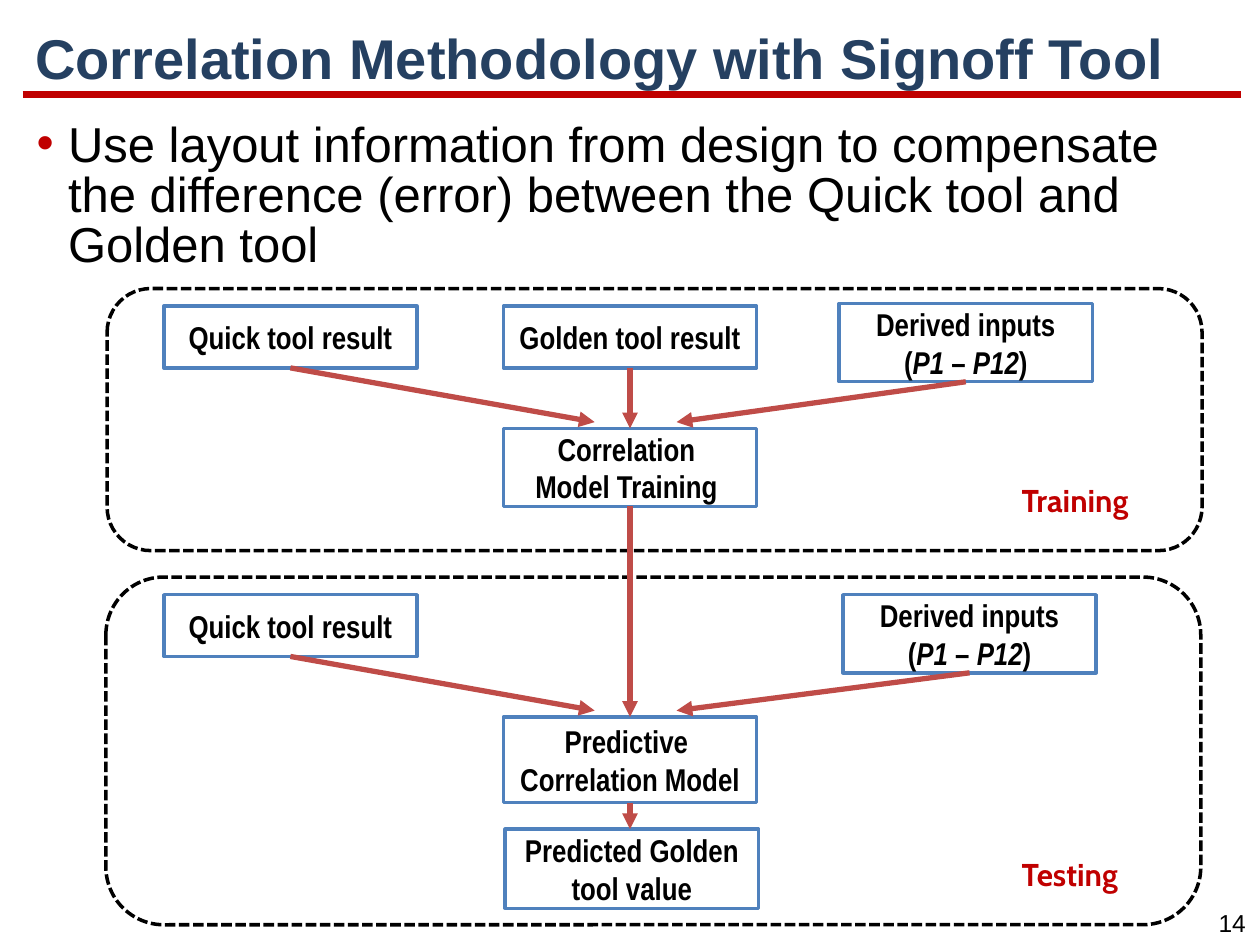
from lxml.etree import SubElement
from pptx import Presentation
from pptx.dml.color import RGBColor
from pptx.enum.dml import MSO_LINE
from pptx.enum.shapes import MSO_CONNECTOR, MSO_SHAPE
from pptx.enum.text import MSO_ANCHOR, MSO_AUTO_SIZE, PP_ALIGN
from pptx.oxml.ns import qn
from pptx.util import Inches, Pt

COLORS = {"navy": "254061", "red": "C00000", "black": "000000",
          "box": "4F81BD", "arrow": "BF4C48"}
FONTS = {
    "title": {"name": "Arial", "size": Pt(32), "bold": True, "color": "navy"},
    "body": {"name": "Arial", "size": Pt(28), "color": "black"},
    "page": {"name": "Arial", "size": Pt(14), "color": "black"},
    "box": {"name": "Arial Narrow", "size": Pt(18), "bold": True, "color": "black"},
    "label": {"name": "Cabin", "size": Pt(18), "bold": True, "color": "red"},
}
BOX_WIDTH = 2.01
CENTER = 5
DERIVED = "Derived inputs\n(*P1* – *P12*)"


def color(name):
    return RGBColor.from_string(COLORS[name])


def set_all(target, values):
    for name, value in values.items():
        setattr(target, name, value)


class FlowSlide:
    def __init__(self, deck):
        self.page = deck.slides.add_slide(deck.slide_layouts[1])
        self.shapes = self.page.shapes

    def fill_text(self, shape, text, style, frame_format, para_format):
        """Fill a shape with one paragraph per line; *stars* mark italics."""
        frame = shape.text_frame
        set_all(frame, frame_format)
        for index, line in enumerate(text.split("\n")):
            para = frame.add_paragraph() if index else frame.paragraphs[0]
            set_all(para, para_format)
            for part, words in enumerate(line.split("*")):
                span = para.add_run()
                span.text = words
                values = dict(FONTS[style])
                span.font.color.rgb = color(values.pop("color"))
                set_all(span.font, values)
                if part % 2:
                    span.font.italic = True

    def place(self, shape, left, top, width, height):
        set_all(shape, {"left": Inches(left), "top": Inches(top),
                        "width": Inches(width), "height": Inches(height)})

    def title(self, text):
        shape = self.shapes.title
        self.place(shape, 0.18, 0.16, 9.68, 0.65)
        self.fill_text(shape, text, "title",
                       {"vertical_anchor": MSO_ANCHOR.MIDDLE,
                        "auto_size": MSO_AUTO_SIZE.NONE},
                       {"alignment": PP_ALIGN.LEFT, "line_spacing": 0.9})

    def bullet(self, text):
        shape = self.page.placeholders[1]
        self.place(shape, 0.19, 0.92, 9.66, 6.08)
        self.fill_text(shape, text, "body", {"auto_size": MSO_AUTO_SIZE.NONE},
                       {"line_spacing": 0.85, "space_before": Pt(8)})
        properties = shape.text_frame.paragraphs[0]._p.get_or_add_pPr()
        properties.set("marL", str(Inches(0.25)))
        properties.set("indent", str(Inches(-0.25)))
        tint = SubElement(properties, qn("a:buClr"))
        SubElement(tint, qn("a:srgbClr"), val=COLORS["red"])
        SubElement(properties, qn("a:buFont"), typeface="Arial")
        SubElement(properties, qn("a:buChar"), char="•")

    def line(self, start, end, tint, width):
        points = [Inches(value) for value in (*start, *end)]
        line = self.shapes.add_connector(MSO_CONNECTOR.STRAIGHT, *points)
        line.line.color.rgb = color(tint)
        line.line.width = Pt(width)
        SubElement(line._element.spPr, qn("a:effectLst"))
        return line

    def title_rule(self):
        rule = self.line((0.18, 0.75), (9.85, 0.75), "red", 4.5)
        self.shapes.title._element.addprevious(rule._element)

    def arrow(self, start, end):
        arrow = self.line(start, end, "arrow", 3)
        SubElement(arrow.line._get_or_add_ln(), qn("a:tailEnd"), type="triangle")

    def outline(self, kind, area, tint):
        shape = self.shapes.add_shape(kind, *[Inches(value) for value in area])
        shape.shadow.inherit = False
        shape.fill.background()
        shape.line.color.rgb = color(tint)
        shape.line.width = Pt(2)
        return shape

    def panel(self, *area):
        panel = self.outline(MSO_SHAPE.ROUNDED_RECTANGLE, area, "black")
        panel.line.dash_style = MSO_LINE.SQUARE_DOT

    def box(self, text, left, top, height):
        """Draw a box and return the middle of its top and bottom edges."""
        box = self.outline(MSO_SHAPE.RECTANGLE, (left, top, BOX_WIDTH, height), "box")
        self.fill_text(box, text, "box",
                       {"word_wrap": False, "vertical_anchor": MSO_ANCHOR.MIDDLE},
                       {"alignment": PP_ALIGN.CENTER})
        middle = left + BOX_WIDTH / 2
        return (middle, top), (middle, top + height)

    def text(self, text, style, area, wrap=True, alignment=PP_ALIGN.LEFT):
        box = self.shapes.add_textbox(*[Inches(value) for value in area])
        self.fill_text(box, text, style, {"word_wrap": wrap}, {"alignment": alignment})


def main():
    deck = Presentation()
    deck.slide_width, deck.slide_height = Inches(10), Inches(7.5)
    slide = FlowSlide(deck)
    slide.title("Correlation Methodology with Signoff Tool")
    slide.title_rule()
    slide.bullet("Use layout information from design to compensate the difference "
                 "(error) between the Quick tool and Golden tool")
    slide.text("14", "page", (9.56, 7.16, 0.44, 0.34), False, PP_ALIGN.CENTER)
    slide.panel(0.84, 4.58, 8.69, 2.76)
    slide.panel(0.85, 2.29, 8.69, 2.08)

    middle_left = CENTER - BOX_WIDTH / 2
    golden = slide.box("Golden tool result", middle_left, 2.43, 0.49)
    training = slide.box("Correlation \nModel Training ", middle_left, 3.4, 0.62)
    model = slide.box("Predictive \nCorrelation Model", middle_left, 5.69, 0.68)
    slide.box("Predicted Golden\ntool value", 4.01, 6.58, 0.63)

    stages = [(2.43, 6.66, 2.41, training), (4.72, 6.69, 4.72, model)]
    for quick_top, derived_left, derived_top, target in stages:
        quick = slide.box("Quick tool result", 1.3, quick_top, 0.49)
        derived = slide.box(DERIVED, derived_left, derived_top, 0.62)
        arrow_end = target[0][1] - 0.05
        slide.arrow(quick[1], (4.72, arrow_end))
        slide.arrow(derived[1], (5.37, arrow_end))

    slide.arrow(golden[1], training[0])
    slide.arrow(training[1], model[0])
    slide.arrow(model[1], (CENTER, 6.58))

    for name, top in (("Training", 3.77), ("Testing", 6.74)):
        slide.text(name, "label", (8.01, top, 1.35, 0.4))
    deck.save("out.pptx")


if __name__ == "__main__":
    main()
